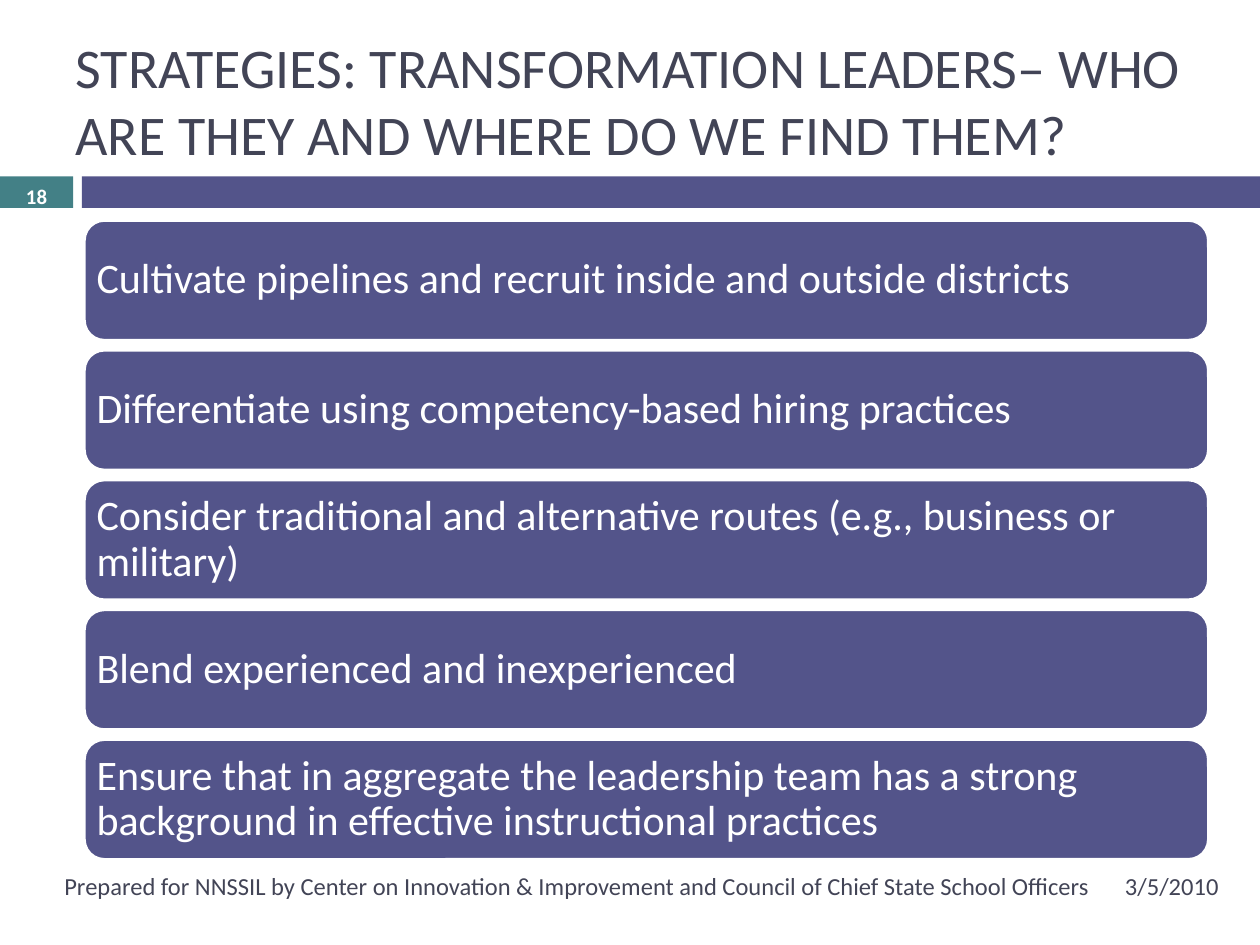
from pptx import Presentation
from pptx.dml.color import RGBColor
from pptx.enum.shapes import MSO_SHAPE
from pptx.enum.text import MSO_ANCHOR, PP_ALIGN
from pptx.util import Inches, Pt

RECT, ROUNDED = MSO_SHAPE.RECTANGLE, MSO_SHAPE.ROUNDED_RECTANGLE
MIDDLE = MSO_ANCHOR.MIDDLE
LEFT, CENTER, RIGHT = PP_ALIGN.LEFT, PP_ALIGN.CENTER, PP_ALIGN.RIGHT

FONT = "Calibri"
INK, INDIGO, TEAL, WHITE = "424456", "53548A", "438086", "FFFFFF"

STRATEGIES = [
    "Cultivate pipelines and recruit inside and outside districts",
    "Differentiate using competency-based hiring practices",
    "Consider traditional and alternative routes (e.g., business or military)",
    "Blend experienced and inexperienced",
    "Ensure that in aggregate the leadership team has a strong background "
    "in effective instructional practices",
]
FIRST_TOP, STEP = 1.75, 1.03


def rgb(value):
    return RGBColor.from_string(value)


class Deck:
    def __init__(self, slide):
        self.slide = slide

    def set_text(self, shape, text, size, color, align=LEFT, bold=False,
                 spacing=1.0, inset_x=0.1):
        frame = shape.text_frame
        frame.word_wrap = True
        frame.vertical_anchor = MIDDLE
        frame.margin_left = frame.margin_right = Inches(inset_x)
        frame.margin_top = frame.margin_bottom = Inches(0.05)
        paragraph = frame.paragraphs[0]
        paragraph.alignment = align
        paragraph.line_spacing = spacing
        run = paragraph.add_run()
        run.text = text
        run.font.name = FONT
        run.font.size = Pt(size)
        run.font.bold = bold
        run.font.color.rgb = rgb(color)

    def label(self, box, text, size, color=INK, **style):
        shape = self.slide.shapes.add_textbox(*map(Inches, box))
        self.set_text(shape, text, size, color, **style)

    def block(self, kind, box, fill):
        shape = self.slide.shapes.add_shape(kind, *map(Inches, box))
        shape.shadow.inherit = False
        shape.fill.solid()
        shape.fill.fore_color.rgb = rgb(fill)
        shape.line.fill.background()
        return shape

    def card(self, box, text):
        shape = self.block(ROUNDED, box, INDIGO)
        shape.line.color.rgb = rgb(WHITE)
        shape.line.width = Pt(1.5)
        # The rounded corners already inset the text a little
        self.set_text(shape, text, 24, WHITE, spacing=0.9, inset_x=0.05)


def main():
    prs = Presentation()
    prs.slide_width, prs.slide_height = Inches(10), Inches(7.5)
    deck = Deck(prs.slides.add_slide(prs.slide_layouts[6]))

    # Divider band
    deck.block(RECT, (0, 1.4, 0.58, 0.25), TEAL)
    deck.block(RECT, (0.65, 1.4, 9.35, 0.25), INDIGO)

    # Title
    deck.label((0.5, 0.25, 9.25, 1.08),
               "STRATEGIES: TRANSFORMATION LEADERS– WHO ARE THEY "
               "AND WHERE DO WE FIND THEM?", 32)

    # Strategy cards
    for row, strategy in enumerate(STRATEGIES):
        deck.card((0.67, FIRST_TOP + row * STEP, 8.92, 0.95), strategy)

    # Footer, date and slide number
    deck.label((0.25, 6.83, 8.5, 0.4),
               "Prepared for NNSSIL by Center on Innovation & Improvement "
               "and Council of Chief State School Officers", 14, align=RIGHT)
    deck.label((8.83, 6.83, 1.08, 0.4), "3/5/2010", 14)
    deck.label((0, 1.42, 0.58, 0.27), "18", 11.9, WHITE,
               align=CENTER, bold=True)

    prs.save("out.pptx")


if __name__ == "__main__":
    main()
